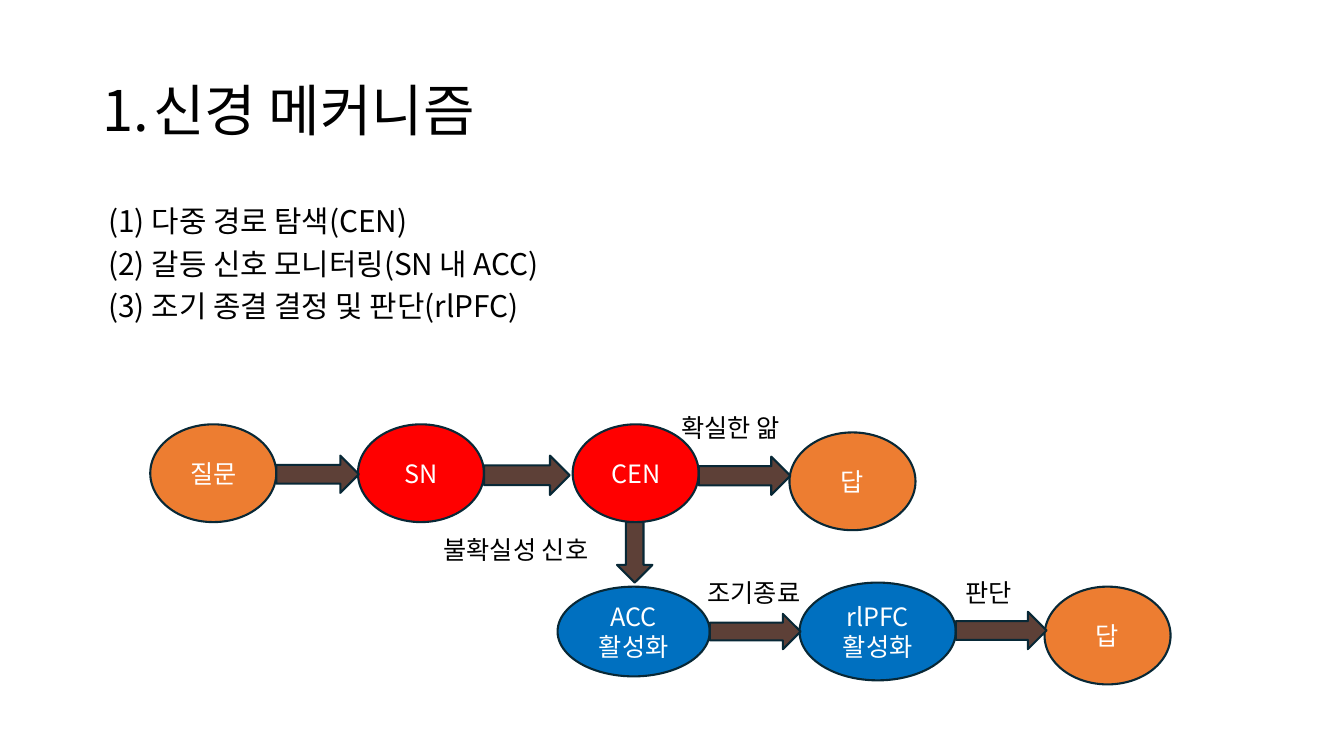
"""Build the slide on neural mechanisms with its decision flow."""
from dataclasses import dataclass

from lxml.etree import SubElement
from pptx import Presentation
from pptx.dml.color import RGBColor as Color
from pptx.enum.shapes import MSO_SHAPE as Kind
from pptx.enum.text import MSO_ANCHOR as Anchor, MSO_AUTO_SIZE as Fit, PP_ALIGN as Align
from pptx.oxml.ns import qn
from pptx.util import Inches, Pt


@dataclass(frozen=True)
class Theme:
    font: str = "Noto Sans CJK KR"
    ink: str = "000000"
    pale: str = "FFFFFF"
    edge: str = "082836"
    arrow: str = "5D4037"
    orange: str = "ED7D31"
    red: str = "FF0000"
    blue: str = "0070C0"
    title: float = 40
    body: float = 21.3
    note: float = 18
    line: float = 1.5


class Deck:
    def __init__(self, theme):
        self.theme = theme
        self.deck = Presentation()
        self.deck.slide_width = Inches(13.33)
        self.deck.slide_height = Inches(7.5)
        self.slide = self.deck.slides.add_slide(self.deck.slide_layouts[1])

    def place(self, shape, box):
        shape.left, shape.top, shape.width, shape.height = map(Inches, box)

    def letter(self, shape, text, size, color, align=Align.LEFT, anchor=Anchor.TOP):
        frame = shape.text_frame
        frame.text = text
        frame.word_wrap = True
        frame.auto_size = Fit.NONE
        frame.vertical_anchor = anchor
        for para in frame.paragraphs:
            para.alignment = align
            for run in para.runs:
                run.font.size = Pt(size)
                run.font.name = self.theme.font
                run.font.color.rgb = Color.from_string(color)
                east = SubElement(run.font._element, qn("a:ea"))
                east.set("typeface", self.theme.font)
        return frame.paragraphs

    def indent(self, para, left, first):
        props = para._p.get_or_add_pPr()
        props.set("marL", str(Inches(left)))
        props.set("indent", str(Inches(first)))
        return props

    def title(self, text, box):
        shape = self.slide.shapes.title
        self.place(shape, box)
        para = self.letter(shape, text, self.theme.title, self.theme.ink,
                           anchor=Anchor.MIDDLE)[0]
        para.line_spacing = 0.9
        props = self.indent(para, 0.5, -0.53)
        tint = SubElement(props, qn("a:buClr"))
        SubElement(tint, qn("a:srgbClr")).set("val", self.theme.ink)
        SubElement(props, qn("a:buFont")).set("typeface", self.theme.font)
        SubElement(props, qn("a:buAutoNum")).set("type", "arabicPeriod")

    def body(self, lines, box):
        shape = self.slide.placeholders[1]
        self.place(shape, box)
        paras = self.letter(shape, "\n".join(lines), self.theme.body, self.theme.ink)
        for rank, para in enumerate(paras):
            para.line_spacing = 0.8
            para.space_before = Pt(10 if rank else 0)
            SubElement(self.indent(para, 0, 0), qn("a:buNone"))
        paras[-1].space_after = Pt(16)

    def shape(self, kind, box, fill):
        shape = self.slide.shapes.add_shape(kind, *map(Inches, box))
        shape.shadow.inherit = False
        shape.fill.solid()
        shape.fill.fore_color.rgb = Color.from_string(fill)
        shape.line.color.rgb = Color.from_string(self.theme.edge)
        shape.line.width = Pt(self.theme.line)
        return shape

    def node(self, text, fill, left, top, width=1.25, height=0.97):
        shape = self.shape(Kind.OVAL, (left, top, width, height), fill)
        self.letter(shape, text, self.theme.note, self.theme.pale,
                    Align.CENTER, Anchor.MIDDLE)

    def arrow(self, *box, kind=Kind.RIGHT_ARROW):
        self.shape(kind, box, self.theme.arrow)

    def label(self, text, left, top, width=2.47):
        box = self.slide.shapes.add_textbox(*map(Inches, (left, top, width, 0.4)))
        self.letter(box, text, self.theme.note, self.theme.ink)


def main():
    theme = Theme()
    deck = Deck(theme)
    deck.title("신경 메커니즘", (0.92, 0.4, 11.5, 1.45))
    deck.body([
        " (1) 다중 경로 탐색(CEN)",
        " (2) 갈등 신호 모니터링(SN 내 ACC)",
        " (3) 조기 종결 결정 및 판단(rlPFC)",
    ], (0.91, 2.03, 11.51, 1.51))

    deck.label("확실한 앎", 6.66, 4.04, 2.99)
    for node in [
        ("질문", theme.orange, 1.49, 4.21),
        ("SN", theme.red, 3.55, 4.21),
        ("CEN", theme.red, 5.68, 4.21),
        ("답", theme.orange, 7.83, 4.29),
        ("ACC\n활성화", theme.blue, 5.53, 5.82, 1.51, 0.89),
        ("rlPFC\n활성화", theme.blue, 7.93, 5.78, 1.55),
        ("답", theme.orange, 10.36, 5.82),
    ]:
        deck.node(*node)

    for box in [
        (2.74, 4.52, 0.82, 0.37),
        (4.8, 4.52, 0.85, 0.39),
        (6.93, 4.53, 0.91, 0.38),
        (7.04, 6.09, 0.9, 0.35),
        (9.48, 6.07, 0.9, 0.37),
    ]:
        deck.arrow(*box)
    deck.arrow(6.12, 5.18, 0.35, 0.6, kind=Kind.DOWN_ARROW)

    deck.label("불확실성 신호", 4.3, 5.25)
    deck.label("조기종료", 6.92, 5.68)
    deck.label("판단", 9.48, 5.68)
    deck.deck.save("out.pptx")


if __name__ == "__main__":
    main()
